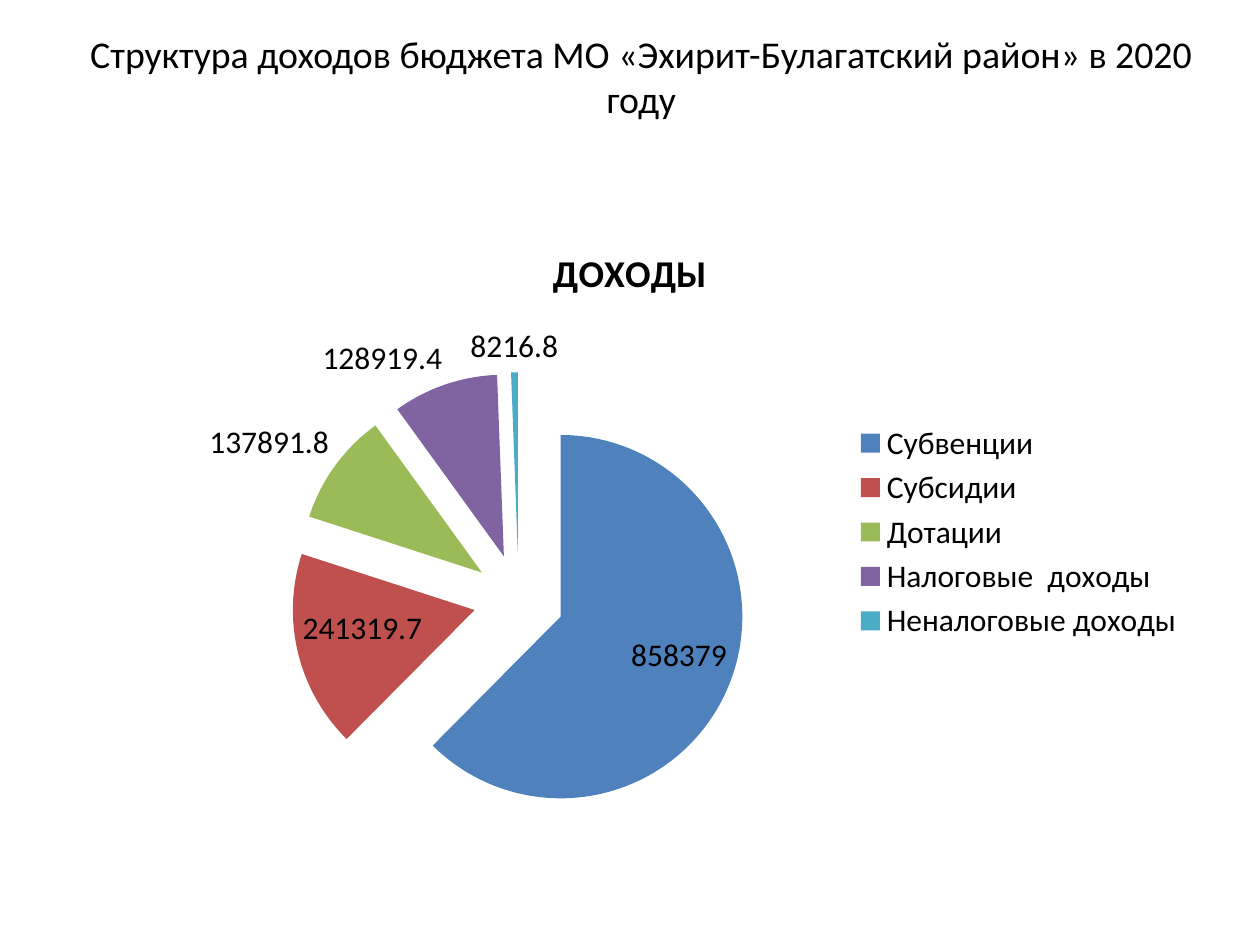
from lxml.etree import Element
from pptx import Presentation
from pptx.chart.data import CategoryChartData
from pptx.dml.color import RGBColor
from pptx.enum.chart import XL_CHART_TYPE, XL_LABEL_POSITION, XL_LEGEND_POSITION
from pptx.enum.text import MSO_ANCHOR, PP_ALIGN
from pptx.oxml.ns import qn
from pptx.util import Inches, Pt

FONT = "Calibri"
HUES = {
    "ink": "000000",
    "Субвенции": "4F81BD",
    "Субсидии": "C0504D",
    "Дотации": "9BBB59",
    "Налоговые  доходы": "8064A2",
    "Неналоговые доходы": "4BACC6",
}
SUMS = {
    "Субвенции": 858379,
    "Субсидии": 241319.7,
    "Дотации": 137891.8,
    "Налоговые  доходы": 128919.4,
    "Неналоговые доходы": 8216.8,
}

deck = Presentation()
deck.slide_width, deck.slide_height = Inches(10), Inches(7.5)
wide, high = deck.slide_width, deck.slide_height
slide = deck.slides.add_slide(deck.slide_layouts[6])


def write(frame, text, size=18, bold=False, hue="ink"):
    para = frame.paragraphs[0]
    para.alignment = PP_ALIGN.CENTER
    run = para.add_run()
    run.text = text
    run.font.name = FONT
    run.font.size = Pt(size)
    run.font.bold = bold
    run.font.color.rgb = RGBColor.from_string(HUES[hue])


box = slide.shapes.add_textbox(
    int(wide * 0.059), int(high * 0.028), int(wide * 0.9), int(high * 0.105)
)
box.text_frame.word_wrap = True
box.text_frame.vertical_anchor = MSO_ANCHOR.MIDDLE
write(
    box.text_frame,
    "Структура доходов бюджета МО «Эхирит-Булагатский район» в 2020 году",
    size=21.6,
)

data = CategoryChartData()
data.categories = list(SUMS)
data.add_series("ДОХОДЫ", list(SUMS.values()))
chart = slide.shapes.add_chart(
    XL_CHART_TYPE.PIE,
    int(wide * 0.05), int(high * 0.233), int(wide * 0.9), int(high * 0.66),
    data,
).chart
chart.font.name = FONT
chart.font.size = Pt(18)
chart.font.color.rgb = RGBColor.from_string(HUES["ink"])
chart.has_title = True
write(chart.chart_title.text_frame, "ДОХОДЫ", size=21.6, bold=True)
chart.chart_title.include_in_layout = False
chart.has_legend = True
chart.legend.position = XL_LEGEND_POSITION.RIGHT
chart.legend.include_in_layout = False

plot = chart.plots[0]
plot.vary_by_categories = True
plot.has_data_labels = True
plot.data_labels.show_value = True
plot.data_labels.show_percentage = False
plot.data_labels.position = XL_LABEL_POSITION.BEST_FIT

for place, name in enumerate(SUMS):
    fill = plot.series[0].points[place].format.fill
    fill.solid()
    fill.fore_color.rgb = RGBColor.from_string(HUES[name])

for slice in chart.element.iter(qn("c:dPt")):
    gap = Element(qn("c:explosion"), val="25")
    slice.find(qn("c:spPr")).addprevious(gap)

deck.save("out.pptx")
